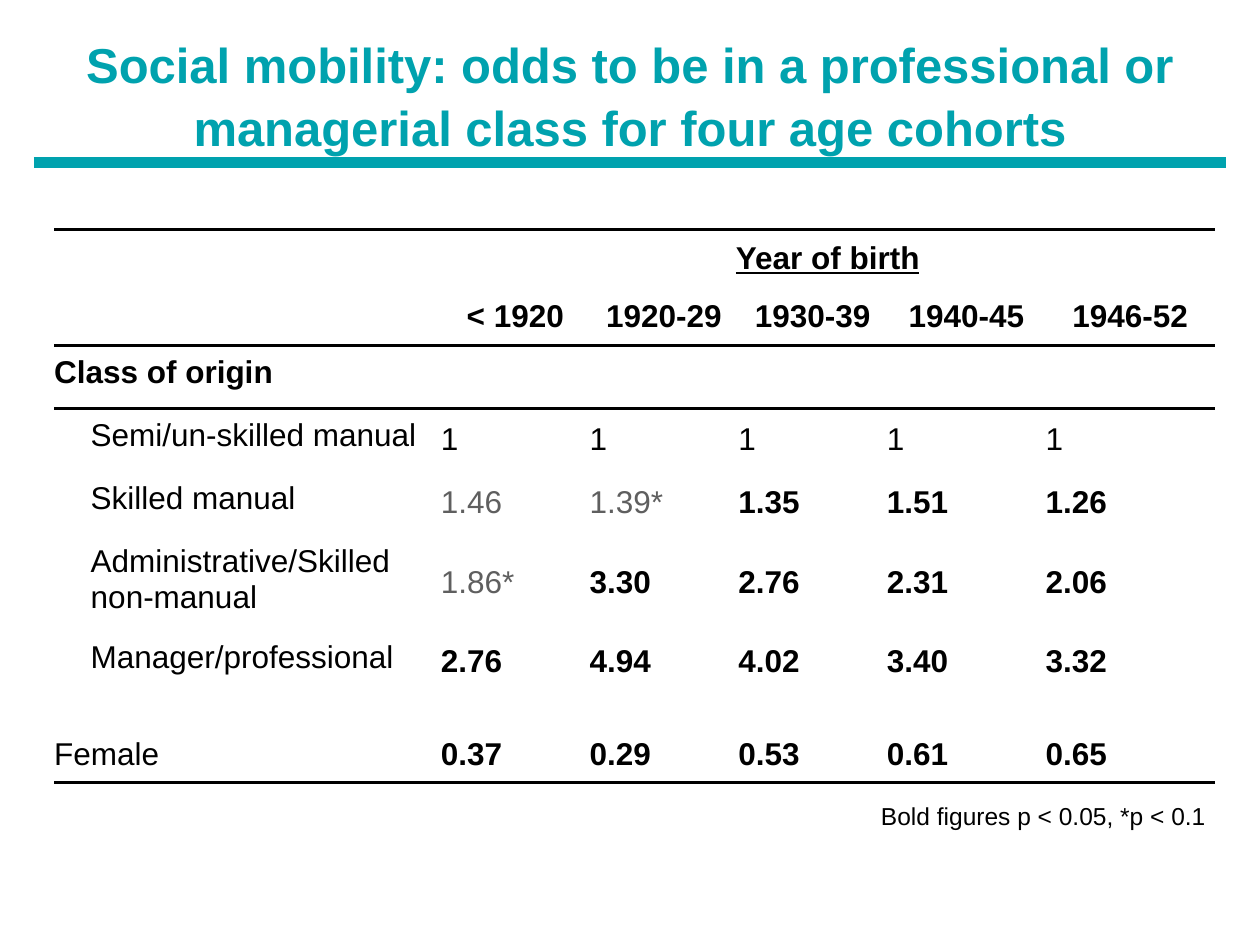
from lxml import etree
from pptx import Presentation
from pptx.dml.color import RGBColor
from pptx.enum.shapes import MSO_CONNECTOR
from pptx.enum.text import MSO_ANCHOR, PP_ALIGN
from pptx.oxml.ns import qn
from pptx.util import Inches, Pt

STRAIGHT = MSO_CONNECTOR.STRAIGHT
TOP, MIDDLE, BOTTOM = MSO_ANCHOR.TOP, MSO_ANCHOR.MIDDLE, MSO_ANCHOR.BOTTOM
LEFT, CENTER, RIGHT = PP_ALIGN.LEFT, PP_ALIGN.CENTER, PP_ALIGN.RIGHT
TEAL, BLACK, GREY = "00A2AE", "000000", "5F5F5F"
NO_STYLE = "{2D5ABB26-0587-4C30-8999-92F81FD0307C}"


def color(hex_string):
    return RGBColor.from_string(hex_string)


def add_text(frame, text, size, hex_string=BLACK, bold=False, align=LEFT):
    frame.word_wrap = True
    paragraph = frame.paragraphs[0]
    paragraph.alignment = align
    run = paragraph.add_run()
    run.text = text
    run.font.name = "Arial"
    run.font.size = Pt(size)
    run.font.bold = bold
    run.font.color.rgb = color(hex_string)
    return paragraph


presentation = Presentation()
presentation.slide_width = Inches(10)
presentation.slide_height = Inches(7.5)
slide = presentation.slides.add_slide(presentation.slide_layouts[6])

rule = slide.shapes.add_connector(STRAIGHT, Inches(0.27), Inches(1.29), Inches(9.73), Inches(1.29))
rule.line.color.rgb = color(TEAL)
rule.line.width = Pt(6)
etree.SubElement(rule._element.spPr, qn("a:effectLst"))

title = slide.shapes.add_textbox(Inches(0), Inches(0.23), Inches(10), Inches(1.02))
title.text_frame.vertical_anchor = MIDDLE
paragraph = add_text(
    title.text_frame,
    "Social mobility: odds to be in a professional or managerial class for four age cohorts",
    28, TEAL, True, CENTER,
)
paragraph.line_spacing = 1.08

rows = [
    ["", "Year of birth", "", "", "", ""],
    ["", "< 1920", "1920-29", "1930-39", "1940-45", "1946-52"],
    ["Class of origin", "", "", "", "", ""],
    ["Semi/un-skilled manual", "1", "1", "1", "1", "1"],
    ["Skilled manual", "1.46", "1.39*", "1.35", "1.51", "1.26"],
    ["Administrative/Skilled non-manual", "1.86*", "3.30", "2.76", "2.31", "2.06"],
    ["Manager/professional", "2.76", "4.94", "4.02", "3.40", "3.32"],
    ["Female", "0.37", "0.29", "0.53", "0.61", "0.65"],
]
column_widths = [3.07, 1.18, 1.18, 1.18, 1.26, 1.34]
row_heights = [0.44, 0.44, 0.5, 0.5, 0.5, 0.71, 0.5, 0.71]
not_significant = ["1.46", "1.39*", "1.86*"]
plain_values = ["1"] + not_significant
bordered_sides = {0: "a:lnT", 1: "a:lnB", 2: "a:lnT", 7: "a:lnB"}

table_frame = slide.shapes.add_table(
    len(rows), len(column_widths), Inches(0.43), Inches(1.82),
    Inches(sum(column_widths)), Inches(sum(row_heights)),
)
table = table_frame.table
table.first_row = False
table.horz_banding = False
table._tbl.tblPr.find(qn("a:tableStyleId")).text = NO_STYLE
for column, width in zip(table.columns, column_widths):
    column.width = Inches(width)
for row, height in zip(table.rows, row_heights):
    row.height = Inches(height)
table.cell(0, 1).merge(table.cell(0, 5))

for row_index, row in enumerate(rows):
    for column_index, text in enumerate(row):
        cell = table.cell(row_index, column_index)
        cell.fill.background()
        cell.margin_left = cell.margin_right = 0
        cell.margin_top = cell.margin_bottom = Inches(0.08)
        if row_index == 7:
            cell.vertical_anchor = BOTTOM
        else:
            cell.vertical_anchor = MIDDLE if column_index else TOP
        if row_index in bordered_sides:
            border = etree.Element(qn(bordered_sides[row_index]), w=str(Pt(2.25)))
            fill = etree.SubElement(border, qn("a:solidFill"))
            etree.SubElement(fill, qn("a:srgbClr"), val=BLACK)
            cell._tc.get_or_add_tcPr().insert(0, border)
        if not text:
            continue
        bold = text not in plain_values if column_index else row_index == 2
        paragraph = add_text(
            cell.text_frame, text, 18, GREY if text in not_significant else BLACK,
            bold, CENTER if row_index < 2 else LEFT,
        )
        if row_index == 0:
            paragraph.runs[0].font.underline = True
        if column_index == 0 and 3 <= row_index <= 6:
            paragraph._p.get_or_add_pPr().set("marL", str(Inches(0.29)))

footnote = slide.shapes.add_textbox(Inches(5.95), Inches(6.31), Inches(3.72), Inches(0.33))
add_text(footnote.text_frame, "Bold figures p < 0.05, *p < 0.1", 14, align=RIGHT)

presentation.save("out.pptx")
